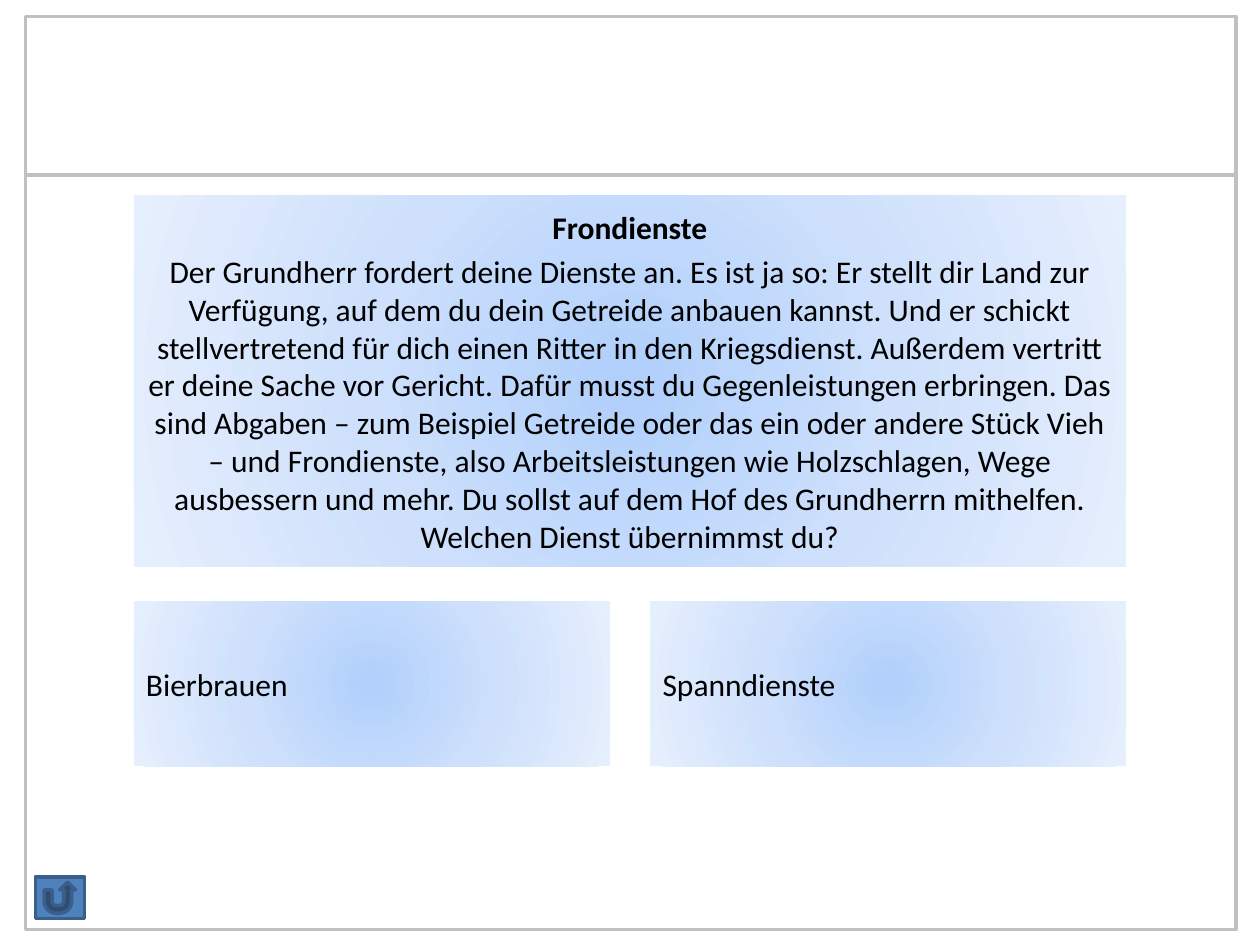
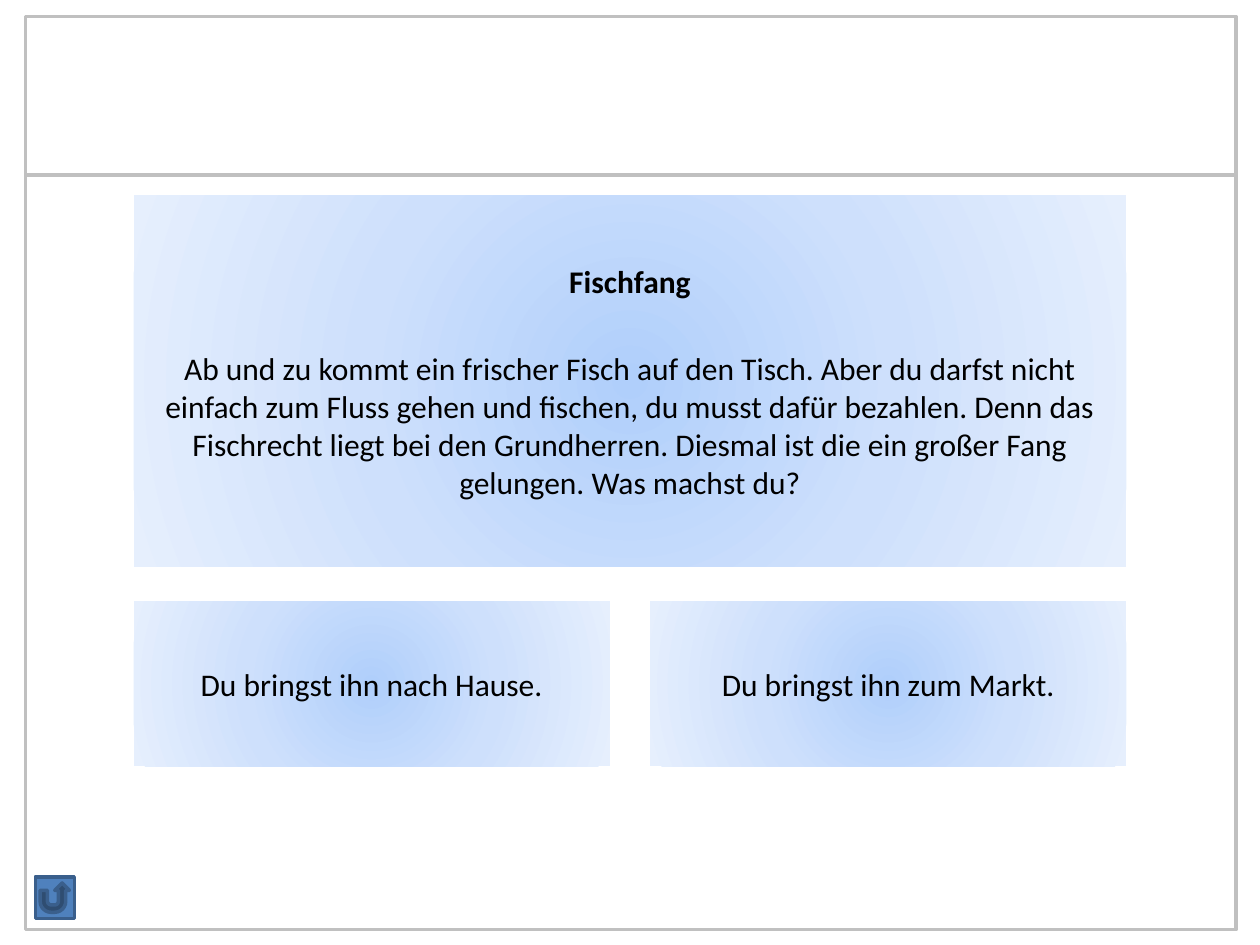
from dataclasses import dataclass

from lxml import etree
from pptx import Presentation
from pptx.dml.color import RGBColor
from pptx.enum.shapes import MSO_SHAPE
from pptx.enum.text import MSO_ANCHOR, PP_ALIGN
from pptx.oxml.ns import qn
from pptx.util import Inches, Pt

RECTANGLE = MSO_SHAPE.RECTANGLE
RETURN_BUTTON = MSO_SHAPE.ACTION_BUTTON_RETURN
MIDDLE = MSO_ANCHOR.MIDDLE
LEFT, CENTER = PP_ALIGN.LEFT, PP_ALIGN.CENTER


@dataclass(frozen=True)
class Theme:
    """Colours, type and line widths shared by the slides."""
    font: str = "Calibri"
    size: float = 18
    text: str = "000000"
    frame: str = "C0C0C0"
    frame_width: float = 1.75
    button: str = "4F81BD"
    button_edge: str = "3A5F8C"
    button_width: float = 2
    glow: tuple = ((0, "B0CFFB"), (50, "CEE0FC"), (100, "E6EFFD"))


@dataclass(frozen=True)
class Box:
    """A region of the slide in inches."""
    left: float
    top: float
    width: float
    height: float


@dataclass(frozen=True)
class EventCard:
    """One game event with its two answers."""
    heading: str
    story: str
    answers: tuple
    story_gap: float
    answer_align: int
    button_width: float


THEME = Theme()
FRAME = Box(0.2, 0.13, 9.61, 7.25)
HEADER_HEIGHT = 1.26
CONTENT = Box(1.06, 1.55, 7.88, 4.53)
STORY_HEIGHT = 2.95
ANSWER_HEIGHT = 1.31
ANSWER_GAP = 0.32

CARDS = (
    EventCard(
        "Frondienste",
        "Der Grundherr fordert deine Dienste an. Es ist ja so: Er stellt dir Land "
        "zur Verfügung, auf dem du dein Getreide anbauen kannst. Und er schickt "
        "stellvertretend für dich einen Ritter in den Kriegsdienst. Außerdem "
        "vertritt er deine Sache vor Gericht. Dafür musst du Gegenleistungen "
        "erbringen. Das sind Abgaben – zum Beispiel Getreide oder das ein oder "
        "andere Stück Vieh – und Frondienste, also Arbeitsleistungen wie "
        "Holzschlagen, Wege ausbessern und mehr. Du sollst auf dem Hof des "
        "Grundherrn mithelfen. Welchen Dienst übernimmst du?",
        ("Bierbrauen", "Spanndienste"), 3.6, LEFT, 0.39),
    EventCard(
        "Fischfang",
        "Ab und zu kommt ein frischer Fisch auf den Tisch. Aber du darfst nicht "
        "einfach zum Fluss gehen und fischen, du musst dafür bezahlen. Denn das "
        "Fischrecht liegt bei den Grundherren. Diesmal ist die ein großer Fang "
        "gelungen. Was machst du?",
        ("Du bringst ihn nach Hause.", "Du bringst ihn zum Markt."),
        28.6, CENTER, 0.31),
)


def add_box(slide, preset, box):
    """Add a preset shape without shadow that fills the box."""
    shape = slide.shapes.add_shape(preset, Inches(box.left), Inches(box.top),
                                   Inches(box.width), Inches(box.height))
    shape.shadow.inherit = False
    return shape


def set_outline(shape, color, width):
    """Give the shape a solid outline."""
    shape.line.color.rgb = RGBColor.from_string(color)
    shape.line.width = Pt(width)


def set_glow(shape):
    """Fill the shape with the circular gradient of the theme."""
    gradient = etree.Element(qn("a:gradFill"), rotWithShape="1")
    stops = etree.SubElement(gradient, qn("a:gsLst"))
    for percent, color in THEME.glow:
        stop = etree.SubElement(stops, qn("a:gs"), pos=str(percent * 1000))
        etree.SubElement(stop, qn("a:srgbClr"), val=color)
    circle = etree.SubElement(gradient, qn("a:path"), path="circle")
    etree.SubElement(circle, qn("a:fillToRect"),
                     l="50000", t="50000", r="50000", b="50000")
    shape._element.spPr.insert(2, gradient)


def add_panel(slide, box, align, *lines):
    """Add a glowing panel with lines of (text, bold, space before)."""
    panel = add_box(slide, RECTANGLE, box)
    set_glow(panel)
    panel.line.fill.background()
    frame = panel.text_frame
    frame.word_wrap = True
    frame.vertical_anchor = MIDDLE
    for index, (text, bold, gap) in enumerate(lines):
        paragraph = frame.add_paragraph() if index else frame.paragraphs[0]
        paragraph.text = text
        paragraph.alignment = align
        if gap:
            paragraph.space_before = Pt(gap)
        paragraph.font.name = THEME.font
        paragraph.font.size = Pt(THEME.size)
        paragraph.font.bold = bold
        paragraph.font.color.rgb = RGBColor.from_string(THEME.text)


def add_frame(slide, box):
    """Outline the header band and the body below it."""
    header = Box(box.left, box.top, box.width, HEADER_HEIGHT)
    body = Box(box.left, box.top + HEADER_HEIGHT, box.width,
               box.height - HEADER_HEIGHT)
    for part in (header, body):
        outline = add_box(slide, RECTANGLE, part)
        outline.fill.background()
        set_outline(outline, THEME.frame, THEME.frame_width)


def add_event(slide, box, card):
    """Place the story on top and the answers side by side at the bottom."""
    add_panel(slide, Box(box.left, box.top, box.width, STORY_HEIGHT), CENTER,
              (card.heading, True, 0), (card.story, False, card.story_gap))
    count = len(card.answers)
    width = (box.width - ANSWER_GAP * (count - 1)) / count
    top = box.top + box.height - ANSWER_HEIGHT
    for column, answer in enumerate(card.answers):
        left = box.left + column * (width + ANSWER_GAP)
        add_panel(slide, Box(left, top, width, ANSWER_HEIGHT),
                  card.answer_align, (answer, False, 0))


def add_return_button(slide, box, width):
    """Put the return button in the lower left corner of the box."""
    button = add_box(slide, RETURN_BUTTON,
                     Box(box.left + 0.08, box.top + box.height - 0.42, width, 0.33))
    button.fill.solid()
    button.fill.fore_color.rgb = RGBColor.from_string(THEME.button)
    set_outline(button, THEME.button_edge, THEME.button_width)


def add_card_slide(deck, card):
    """Build the slide of one event card."""
    slide = deck.slides.add_slide(deck.slide_layouts[6])
    add_frame(slide, FRAME)
    add_event(slide, CONTENT, card)
    add_return_button(slide, FRAME, card.button_width)


def main():
    """Build and save the deck."""
    deck = Presentation()
    deck.slide_width, deck.slide_height = Inches(10), Inches(7.5)
    for card in CARDS:
        add_card_slide(deck, card)
    deck.save("out.pptx")


if __name__ == "__main__":
    main()
